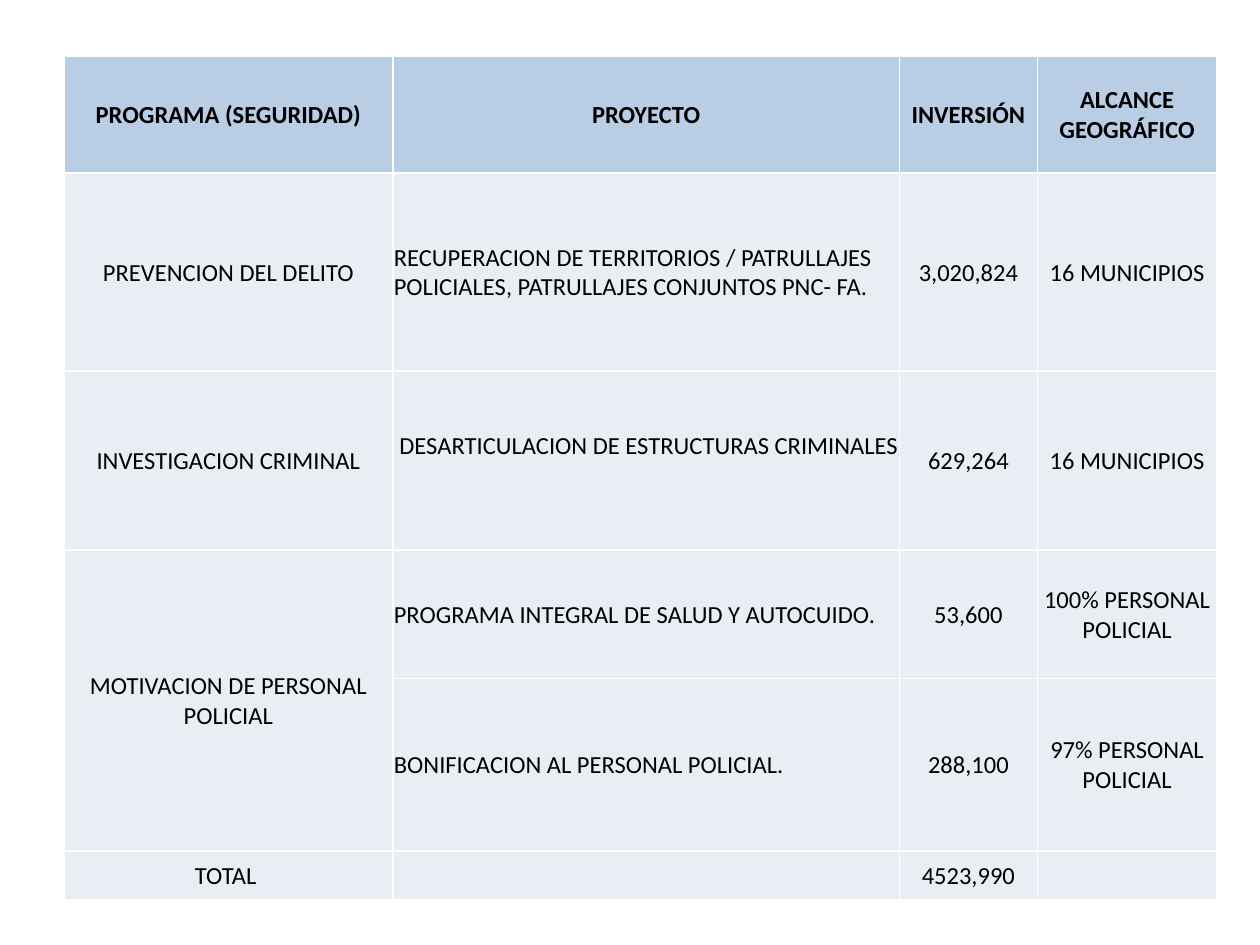
from lxml import etree
from pptx import Presentation
from pptx import util as u
from pptx.dml import color
from pptx.enum import text
from pptx.oxml import ns

COLORS = {"header": "B9CDE5", "body": "E9EDF4", "border": "FFFFFF", "text": "000000"}
FONT = "Calibri"
COLUMN_WIDTHS = [6.63, 10.21, 2.79, 3.61]
ROW_HEIGHTS = [2.36, 3.99, 3.61, 2.59, 3.48, 0.97]
PROJECT_COLUMN = 1
ROWS = [
    ["PROGRAMA (SEGURIDAD)", "PROYECTO", "INVERSIÓN", "ALCANCE GEOGRÁFICO"],
    ["PREVENCION DEL DELITO",
     "RECUPERACION DE TERRITORIOS / PATRULLAJES POLICIALES, PATRULLAJES CONJUNTOS PNC- FA.",
     "3,020,824", "16 MUNICIPIOS"],
    ["INVESTIGACION CRIMINAL", " DESARTICULACION DE ESTRUCTURAS CRIMINALES",
     "629,264", "16 MUNICIPIOS"],
    ["MOTIVACION DE PERSONAL POLICIAL", "PROGRAMA INTEGRAL DE SALUD Y AUTOCUIDO.",
     "53,600", "100% PERSONAL POLICIAL"],
    ["", "BONIFICACION AL PERSONAL POLICIAL.", "288,100", "97% PERSONAL POLICIAL"],
    ["TOTAL ", "", "4523,990", ""],
]


def set_borders(cell):
    properties = cell._tc.get_or_add_tcPr()
    for index, side in enumerate(("lnL", "lnR", "lnT", "lnB")):
        line = etree.Element(ns.qn(f"a:{side}"), w=str(u.Pt(1)))
        fill = etree.SubElement(line, ns.qn("a:solidFill"))
        etree.SubElement(fill, ns.qn("a:srgbClr"), val=COLORS["border"])
        properties.insert(index, line)


def format_cell(cell, content, is_header, is_project):
    cell.fill.solid()
    cell.fill.fore_color.rgb = color.RGBColor.from_string(
        COLORS["header" if is_header else "body"])
    set_borders(cell)
    cell.vertical_anchor = text.MSO_ANCHOR.MIDDLE
    cell.margin_left = cell.margin_right = cell.margin_top = u.Cm(0.02)
    cell.margin_bottom = u.Cm(0)
    if not content:
        return
    paragraph = cell.text_frame.paragraphs[0]
    left_aligned = is_project and not is_header
    paragraph.alignment = text.PP_ALIGN.LEFT if left_aligned else text.PP_ALIGN.CENTER
    run = paragraph.add_run()
    run.text = content
    run.font.name = FONT
    run.font.size = u.Pt(14)
    run.font.bold = is_header
    run.font.color.rgb = color.RGBColor.from_string(COLORS["text"])


def add_investment_table(slide, left, top, width, height):
    shape = slide.shapes.add_table(len(ROWS), len(COLUMN_WIDTHS), left, top, width, height)
    table = shape.table
    for column, column_width in zip(table.columns, COLUMN_WIDTHS):
        column.width = int(width * column_width / sum(COLUMN_WIDTHS))
    for row, row_height in zip(table.rows, ROW_HEIGHTS):
        row.height = int(height * row_height / sum(ROW_HEIGHTS))
    for row_index, contents in enumerate(ROWS):
        for column_index, content in enumerate(contents):
            format_cell(table.cell(row_index, column_index), content,
                        row_index == 0, column_index == PROJECT_COLUMN)
    table.cell(3, 0).merge(table.cell(4, 0))
    table.cell(2, PROJECT_COLUMN).margin_bottom = u.Cm(0.6)


def main():
    presentation = Presentation()
    presentation.slide_width = u.Cm(25.4)
    presentation.slide_height = u.Cm(19.05)
    slide = presentation.slides.add_slide(presentation.slide_layouts.get_by_name("Blank"))
    add_investment_table(slide, u.Cm(1.29), u.Cm(1.13), u.Cm(23.24), u.Cm(17))
    presentation.save("out.pptx")


if __name__ == "__main__":
    main()
